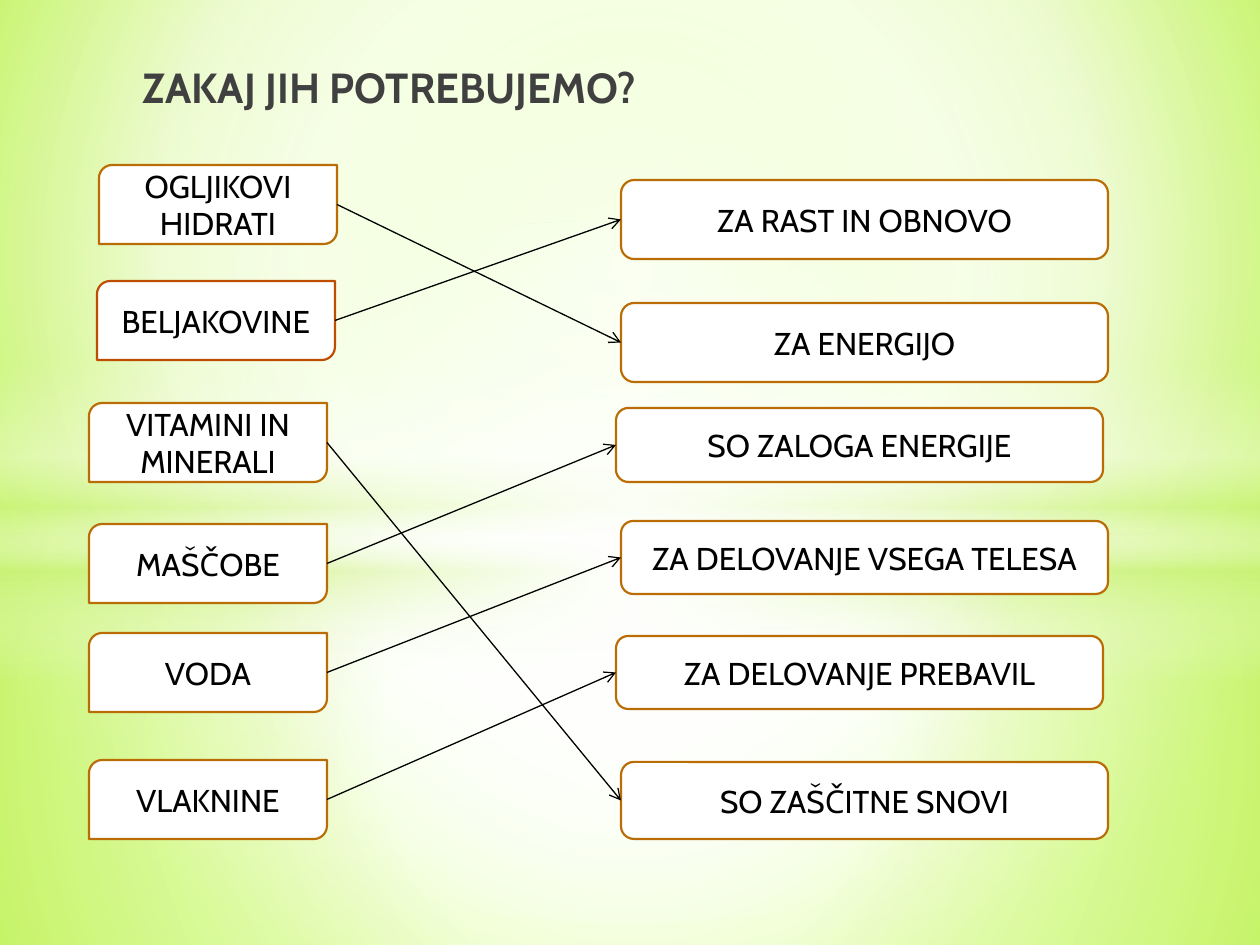
from lxml import etree
from pptx import Presentation
from pptx import util as u
from pptx.dml.color import RGBColor
from pptx.enum import shapes, text
from pptx.oxml.ns import qn

SCALE = 914400 / 126
COLORS = {
    "white": "FFFFFF", "lime": "CAF278", "bright": "CAFF60", "pale": "F7FFE7",
    "edge": "B7FF29", "amber": "BA6D04", "rust": "BF4D00", "ink": "000000", "title": "404040",
}
CENTER = (50, 50, 50, 50)


def px(length):
    return u.Emu(round(length * SCALE))


def color(name):
    return RGBColor.from_string(COLORS[name])


def write(frame, words, *, size, ink="ink", bold=False, align=text.PP_ALIGN.CENTER,
          anchor=text.MSO_ANCHOR.MIDDLE):
    frame.word_wrap = True
    frame.auto_size = text.MSO_AUTO_SIZE.NONE
    frame.vertical_anchor = anchor
    para = frame.paragraphs[0]
    para.alignment = align
    span = para.add_run()
    span.text = words
    span.font.name = "Cabin"
    span.font.size = u.Pt(size)
    span.font.bold = bold
    span.font.color.rgb = color(ink)
    return para


def set_gradient(fill, owner, stops, focus=None):
    fill.gradient()
    gradient = next(owner.iter(qn("a:gradFill")))
    for child in list(gradient):
        gradient.remove(child)
    stop_list = etree.SubElement(gradient, qn("a:gsLst"))
    for position, name, opacity in stops:
        stop = etree.SubElement(stop_list, qn("a:gs"), pos=str(position * 1000))
        tone = etree.SubElement(stop, qn("a:srgbClr"), val=COLORS[name])
        if opacity < 100:
            etree.SubElement(tone, qn("a:alpha"), val=str(opacity * 1000))
    if focus:
        circle = etree.SubElement(gradient, qn("a:path"), path="circle")
        sides = {side: str(value * 1000) for side, value in zip("ltrb", focus)}
        etree.SubElement(circle, qn("a:fillToRect"), **sides)
    else:
        etree.SubElement(gradient, qn("a:lin"), ang="5400000", scaled="0")


class Slide:
    def __init__(self, deck):
        self.page = deck.slides.add_slide(deck.slide_layouts[5])
        self.size = 18
        self.border = 1.25

    def background(self, stops, focus):
        set_gradient(self.page.background.fill, self.page._element, stops, focus)

    def shape(self, kind, left, top, width, height):
        shape = self.page.shapes.add_shape(kind, px(left), px(top), px(width), px(height))
        shape.shadow.inherit = False
        return shape

    def glow(self, kind, top, height, stops, focus=None):
        shape = self.shape(kind, 0, top, 1260, height)
        shape.line.fill.background()
        set_gradient(shape.fill, shape._element, stops, focus)

    def title(self, words, left, top, width, height):
        title = self.page.shapes.title
        title.left, title.top, title.width, title.height = map(px, (left, top, width, height))
        para = write(title.text_frame, words, size=24, ink="title", bold=True,
                     align=text.PP_ALIGN.LEFT, anchor=text.MSO_ANCHOR.TOP)
        para._p.get_or_add_pPr().set("marL", str(px(25)))
        self.page.shapes._spTree.append(title._element)

    def box(self, kind, words, left, top, width, height, border="amber"):
        box = self.shape(kind, left, top, width, height)
        box.fill.solid()
        box.fill.fore_color.rgb = color("white")
        box.line.color.rgb = color(border)
        box.line.width = u.Pt(self.border)
        write(box.text_frame, words, size=self.size)
        return box

    def arrow(self, source, target):
        arrow = self.page.shapes.add_connector(
            shapes.MSO_CONNECTOR.STRAIGHT,
            source.left + source.width, source.top + source.height // 2,
            target.left, target.top + target.height // 2)
        arrow.line.color.rgb = color("ink")
        arrow.line.width = u.Pt(0.75)
        etree.SubElement(arrow.line._get_or_add_ln(), qn("a:tailEnd"), type="arrow")
        etree.SubElement(arrow._element.spPr, qn("a:effectLst"))


def main():
    deck = Presentation()
    deck.slide_width, deck.slide_height = px(1260), px(945)
    slide = Slide(deck)
    kinds = shapes.MSO_SHAPE

    slide.background([(0, "bright", 100), (60, "pale", 100), (100, "edge", 100)],
                     (20, 10, 20, 60))
    slide.glow(kinds.RECTANGLE, 533, 412,
               [(0, "white", 91), (37, "white", 76), (100, "lime", 79)], CENTER)
    slide.glow(kinds.RECTANGLE, 0, 533,
               [(0, "white", 89), (48, "white", 62), (100, "lime", 79)], CENTER)
    slide.glow(kinds.RECTANGLE, 365, 315,
               [(0, "white", 0), (29, "white", 30), (45, "lime", 40),
                (55, "white", 26), (65, "lime", 60), (100, "white", 0)])
    slide.glow(kinds.OVAL, 221, 703, [(0, "white", 100), (54, "white", 0)], CENTER)
    slide.title("ZAKAJ JIH POTREBUJEMO?", 105, 55, 595, 81)

    nutrients = [
        ("OGLJIKOVI HIDRATI", 99, 165, "amber"),
        ("BELJAKOVINE", 97, 281, "rust"),
        ("VITAMINI IN MINERALI", 89, 403, "amber"),
        ("MAŠČOBE", 89, 524, "amber"),
        ("VODA", 89, 633, "amber"),
        ("VLAKNINE", 89, 760, "amber"),
    ]
    purposes = [
        ("ZA RAST IN OBNOVO", 621, 180, 79),
        ("ZA ENERGIJO", 621, 303, 79),
        ("SO ZALOGA ENERGIJE", 616, 408, 74),
        ("ZA DELOVANJE VSEGA TELESA", 621, 521, 73),
        ("ZA DELOVANJE PREBAVIL", 616, 636, 73),
        ("SO ZAŠČITNE SNOVI", 621, 762, 77),
    ]
    sources = [slide.box(kinds.ROUND_2_DIAG_RECTANGLE, words, left, top, 238, 79, border)
               for words, left, top, border in nutrients]
    targets = [slide.box(kinds.ROUNDED_RECTANGLE, words, left, top, 487, height)
               for words, left, top, height in purposes]
    for source, match in zip(sources, (1, 0, 5, 2, 3, 4)):
        slide.arrow(source, targets[match])

    deck.save("out.pptx")


if __name__ == "__main__":
    main()
